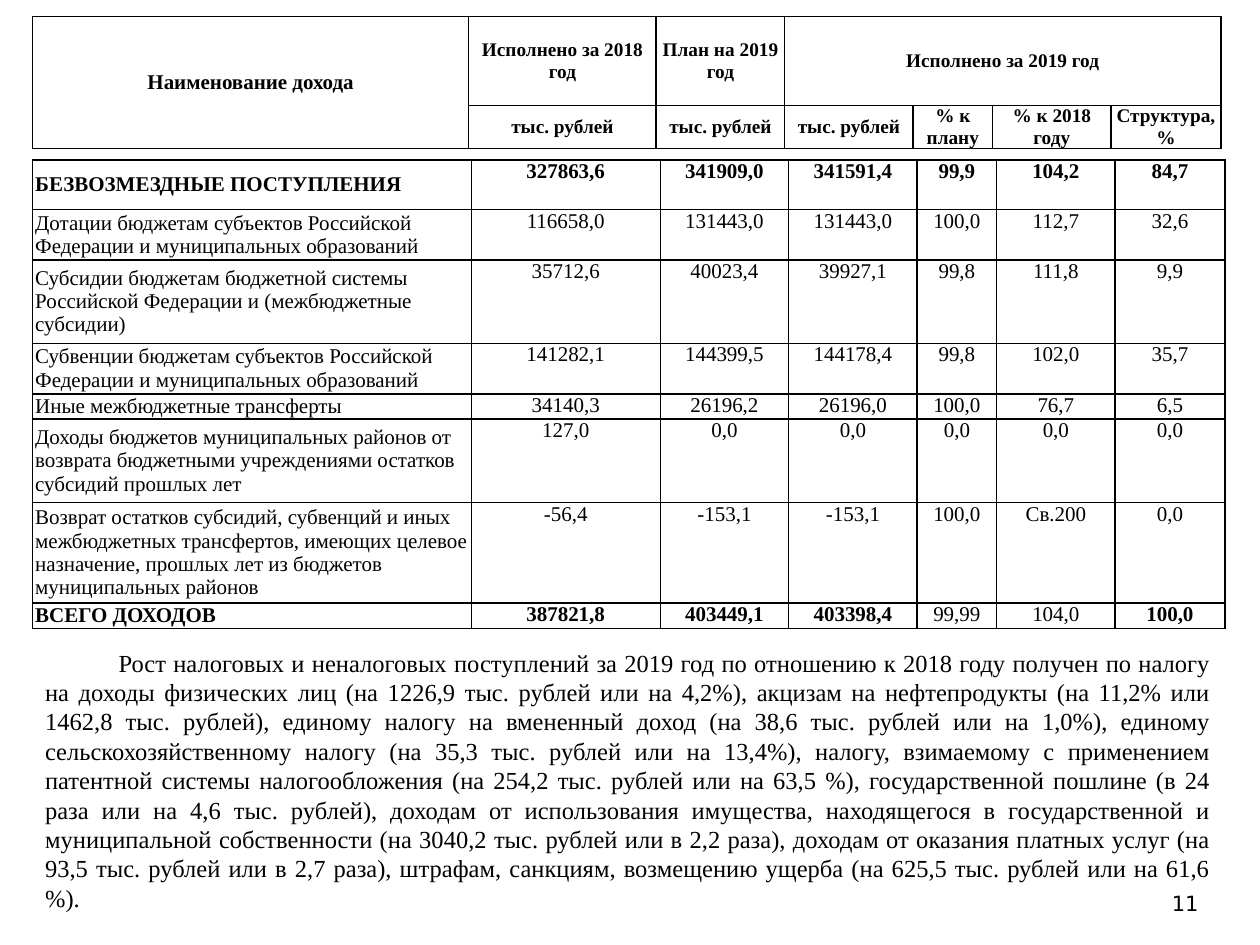
"""Build the budget revenue slide with its two tables and a commentary."""
from lxml import etree
from pptx import Presentation
from pptx import util as u
from pptx.dml.color import RGBColor
from pptx.enum import text
from pptx.oxml.ns import qn

COLORS = {"ink": "000000"}
SERIF, SANS = "Times New Roman", "DejaVu Sans"
LEFT, CENTER = text.PP_ALIGN.LEFT, text.PP_ALIGN.CENTER
TOP, MIDDLE = text.MSO_ANCHOR.TOP, text.MSO_ANCHOR.MIDDLE

HEADER = [
    ["Наименование дохода", "Исполнено за 2018 год", "План на 2019 год",
     "Исполнено за 2019 год", "", "", ""],
    ["", "тыс. рублей", "тыс. рублей", "тыс. рублей", "% к плану",
     "% к 2018 году", "Структура, %"],
]
HEADER_MERGES = [((0, 0), (1, 0)), ((0, 3), (0, 6))]
REVENUES = [
    ["БЕЗВОЗМЕЗДНЫЕ ПОСТУПЛЕНИЯ",
     "327863,6", "341909,0", "341591,4", "99,9", "104,2", "84,7"],
    ["Дотации бюджетам субъектов Российской Федерации и муниципальных образований",
     "116658,0", "131443,0", "131443,0", "100,0", "112,7", "32,6"],
    ["Субсидии бюджетам бюджетной системы Российской Федерации и (межбюджетные субсидии)",
     "35712,6", "40023,4", "39927,1", "99,8", "111,8", "9,9"],
    ["Субвенции бюджетам субъектов Российской Федерации и муниципальных образований",
     "141282,1", "144399,5", "144178,4", "99,8", "102,0", "35,7"],
    ["Иные межбюджетные трансферты",
     "34140,3", "26196,2", "26196,0", "100,0", "76,7", "6,5"],
    ["Доходы бюджетов муниципальных районов от возврата бюджетными учреждениями "
     "остатков субсидий прошлых лет",
     "127,0", "0,0", "0,0", "0,0", "0,0", "0,0"],
    ["Возврат остатков субсидий, субвенций и иных межбюджетных трансфертов, имеющих "
     "целевое назначение, прошлых лет из бюджетов муниципальных районов",
     "-56,4", "-153,1", "-153,1", "100,0", "Св.200", "0,0"],
    ["ВСЕГО ДОХОДОВ",
     "387821,8", "403449,1", "403398,4", "99,99", "104,0", "100,0"],
]
BOLD_COLUMNS = {0: range(7), 7: (0, 1, 2, 3, 6)}
COMMENTARY = [
    "Рост налоговых и неналоговых поступлений за 2019 год по отношению к 2018 году",
    "получен по налогу на доходы физических лиц (на 1226,9 тыс. рублей или на 4,2%),",
    "акцизам на нефтепродукты (на 11,2% или 1462,8 тыс. рублей),",
    "единому налогу на вмененный доход (на 38,6 тыс. рублей или на 1,0%),",
    "единому сельскохозяйственному налогу (на 35,3 тыс. рублей или на 13,4%),",
    "налогу, взимаемому с применением патентной системы налогообложения",
    "(на 254,2 тыс. рублей или на 63,5 %),",
    "государственной пошлине (в 24 раза или на 4,6 тыс. рублей),",
    "доходам от использования имущества, находящегося в государственной и",
    "муниципальной собственности (на 3040,2 тыс. рублей или в 2,2 раза),",
    "доходам от оказания платных услуг (на 93,5 тыс. рублей или в 2,7 раза),",
    "штрафам, санкциям, возмещению ущерба (на 625,5 тыс. рублей или на 61,6 %).",
]
VALUE_WIDTHS = [2.59, 2.59, 1.6, 2.39, 2.21]
MARGIN = 0.66


def write(frame, words, size, align, font=SERIF, bold=False):
    para = frame.paragraphs[0]
    para.alignment = align
    span = para.add_run()
    span.text = words
    span.font.name, span.font.size, span.font.bold = font, u.Pt(size), bold
    span.font.color.rgb = RGBColor.from_string(COLORS["ink"])
    return para


def outline(cell):
    cell.fill.background()
    properties = cell._tc.get_or_add_tcPr()
    for index, side in enumerate(("a:lnL", "a:lnR", "a:lnT", "a:lnB")):
        line = etree.Element(qn(side), w=str(u.Pt(1)))
        fill = etree.SubElement(line, qn("a:solidFill"))
        etree.SubElement(fill, qn("a:srgbClr"), val=COLORS["ink"])
        properties.insert(index, line)


def add_grid(page, top, widths, heights, rows, style, merges=()):
    table = page.shapes.add_table(
        len(rows), len(widths), u.Cm(MARGIN), u.Cm(top),
        u.Cm(sum(widths)), u.Cm(sum(heights))).table
    table.first_row = table.horz_banding = False
    for column, width in zip(table.columns, widths):
        column.width = u.Cm(width)
    for row, height in zip(table.rows, heights):
        row.height = u.Cm(height)
    for first, last in merges:
        table.cell(*first).merge(table.cell(*last))
    for r, row in enumerate(rows):
        for c, words in enumerate(row):
            cell = table.cell(r, c)
            outline(cell)
            size, bold, align, anchor, inset = style(r, c)
            cell.margin_left = cell.margin_right = u.Cm(inset)
            cell.margin_top = cell.margin_bottom = 0
            cell.vertical_anchor = anchor
            if words:
                write(cell.text_frame, words, size, align, bold=bold)


def header_style(r, c):
    return 11 if c else 12, True, CENTER, MIDDLE, 0.05


def revenue_style(r, c):
    bold = c in BOLD_COLUMNS.get(r, ())
    return (12, bold, CENTER, TOP, 0.18) if c else (12, bold, LEFT, MIDDLE, 0.05)


def add_text(page, left, top, width, height, *words, **options):
    box = page.shapes.add_textbox(u.Cm(left), u.Cm(top), u.Cm(width), u.Cm(height))
    box.text_frame.word_wrap = True
    return write(box.text_frame, *words, **options)


def main():
    deck = Presentation()
    deck.slide_width, deck.slide_height = u.Cm(25.4), u.Cm(19.05)
    page = deck.slides.add_slide(deck.slide_layouts[6])
    add_grid(page, 3.23, [8.84, 3.81] + VALUE_WIDTHS,
             [0.99, 1.02, 1.68, 1.02, 0.51, 1.68, 2.03, 0.51], REVENUES, revenue_style)
    add_grid(page, 0.33, [8.79, 3.78] + VALUE_WIDTHS, [1.8, 0.86],
             HEADER, header_style, HEADER_MERGES)
    para = add_text(page, MARGIN, 12.93, 24, 5.64, " ".join(COMMENTARY), 14,
                    text.PP_ALIGN.JUSTIFY)
    para._p.get_or_add_pPr().set("indent", str(u.Cm(1.48)))
    add_text(page, 18.49, 17.83, 5.92, 1.07, "11", 12, text.PP_ALIGN.RIGHT, font=SANS)
    deck.save("out.pptx")


if __name__ == "__main__":
    main()
